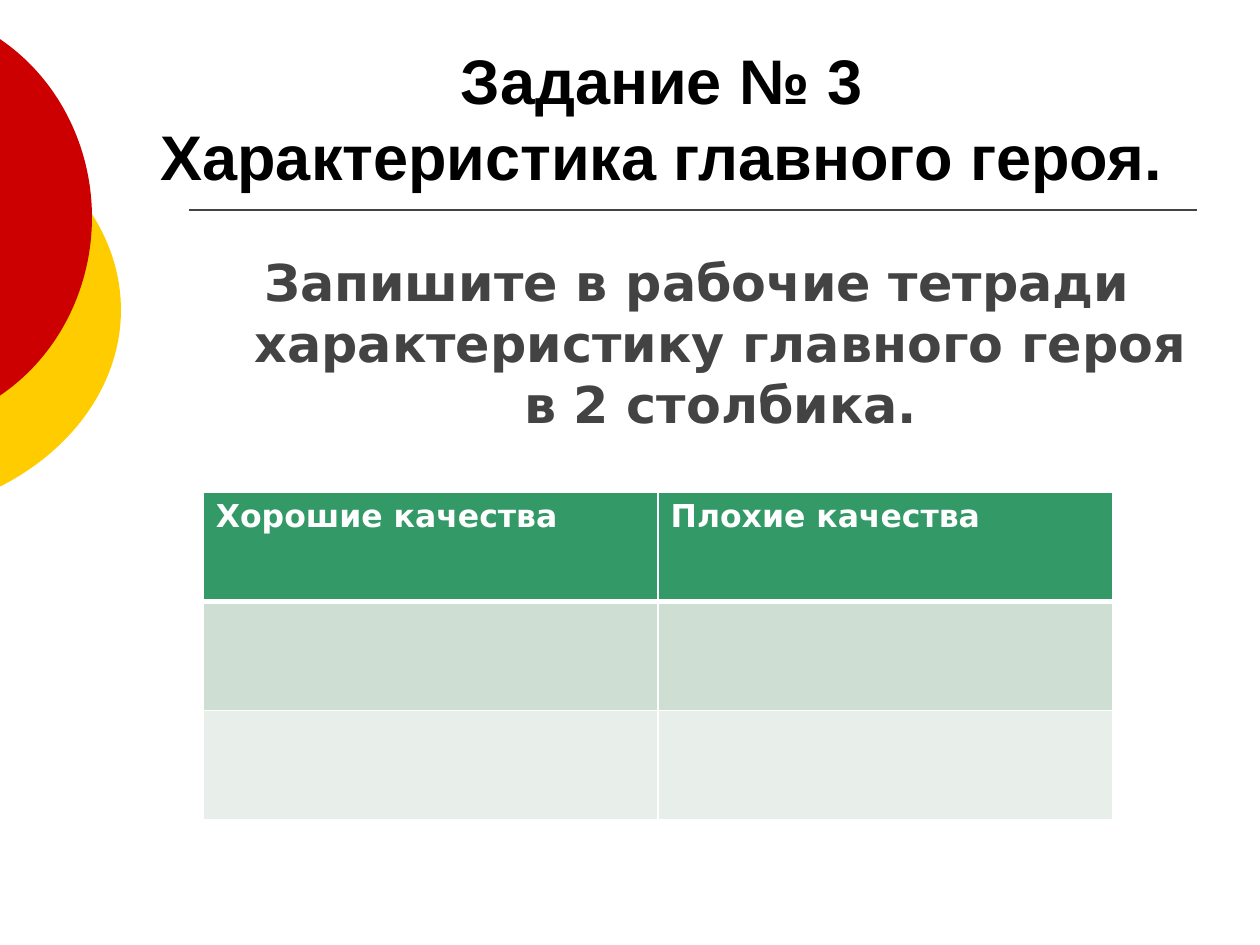
import pptx
import pptx.util
import pptx.dml.color
import pptx.enum.shapes
import pptx.enum.text
import pptx.oxml
import pptx.oxml.ns
import lxml.etree

RGB = pptx.dml.color.RGBColor
WHITE = RGB(0xFF, 0xFF, 0xFF)
BLACK = RGB(0, 0, 0)
GREY = RGB(0x43, 0x43, 0x43)
YELLOW = RGB(0xFF, 0xCC, 0x00)
RED = RGB(0xCC, 0x00, 0x00)
GREEN = RGB(0x33, 0x99, 0x66)
BAND_DARK = RGB(0xCE, 0xDE, 0xD3)
BAND_LIGHT = RGB(0xE8, 0xEF, 0xEA)

COLS, ROWS = 100, 75
UNIT = pptx.util.Inches(0.1)
CUT_SHARE = 0.82
ALIGN = pptx.enum.text.PP_ALIGN
ANCHOR = pptx.enum.text.MSO_ANCHOR


def grid(*values):
    return [round(v * UNIT) for v in values]


def write(tf, text, *, size, color, font="DejaVu Sans", align=ALIGN.LEFT,
          anchor=ANCHOR.TOP, before=0, indent=0):
    tf.word_wrap = True
    tf.vertical_anchor = anchor
    p = tf.paragraphs[0]
    p.alignment = align
    p.space_before = pptx.util.Pt(before)
    if indent:
        pPr = p._p.get_or_add_pPr()
        pPr.set("marL", str(indent))
        pPr.set("indent", str(-indent))
    for i, line in enumerate(text.split("\n")):
        if i:
            p.add_line_break()
        r = p.add_run()
        r.text = line
        r.font.name = font
        r.font.size = pptx.util.Pt(size)
        r.font.bold = True
        r.font.color.rgb = color


def add_text(s, box, text, **fmt):
    write(s.shapes.add_textbox(*grid(*box)).text_frame, text, **fmt)


def add_cut_disc(s, box, color):
    x, y, w, h = grid(*box)
    cut, visible = -x, x + w
    rise = h * CUT_SHARE
    top = (h - rise) / 2

    def points(*shares):
        return "".join(
            f'<a:pt x="{round(cut + px * visible)}" y="{round(top + py * rise)}"/>'
            for px, py in shares)

    fb = s.shapes.build_freeform(0, y)
    fb.add_line_segments([(x + w, y + h // 2), (0, y + h)], close=True)
    sp = fb.convert_to_shape()
    sp.left, sp.top, sp.width, sp.height = x, y, w, h
    outline = pptx.oxml.parse_xml(
        f'<a:path {pptx.oxml.ns.nsdecls("a")} w="{w}" h="{h}">'
        f'<a:moveTo>{points((0, 0))}</a:moveTo>'
        f'<a:cubicBezTo>{points((0.63, 0.11), (1, 0.3), (1, 0.5))}</a:cubicBezTo>'
        f'<a:cubicBezTo>{points((1, 0.7), (0.63, 0.89), (0, 1))}</a:cubicBezTo>'
        '<a:close/></a:path>')
    path_list = sp._element.spPr.find(".//" + pptx.oxml.ns.qn("a:pathLst"))
    path_list[0] = outline
    sp.shadow.inherit = False
    sp.fill.solid()
    sp.fill.fore_color.rgb = color
    sp.line.fill.background()


def add_rule(s, box):
    x, y, w, h = grid(*box)
    line = s.shapes.add_connector(
        pptx.enum.shapes.MSO_CONNECTOR.STRAIGHT, x, y, x + w, y + h)
    line.line.color.rgb = GREY
    line.line.width = pptx.util.Pt(1)
    lxml.etree.SubElement(line._element.spPr, pptx.oxml.ns.qn("a:effectLst"))


def set_borders(cell, top, bottom):
    tcPr = cell._tc.get_or_add_tcPr()
    for i, (side, width) in enumerate(zip("LRTB", (1, 1, top, bottom))):
        tcPr.insert(i, pptx.oxml.parse_xml(
            f'<a:ln{side} {pptx.oxml.ns.nsdecls("a")} w="{pptx.util.Pt(width)}">'
            f'<a:solidFill><a:srgbClr val="{WHITE}"/></a:solidFill></a:ln{side}>'))


def add_qualities_table(s, box, headers):
    fills = (GREEN, BAND_DARK, BAND_LIGHT)
    table = s.shapes.add_table(len(fills), len(headers), *grid(*box)).table
    for i, fill in enumerate(fills):
        for j, header in enumerate(headers):
            cell = table.cell(i, j)
            cell.fill.solid()
            cell.fill.fore_color.rgb = fill
            set_borders(cell, 3 if i == 1 else 1, 3 if i == 0 else 1)
            if i == 0:
                write(cell.text_frame, header, size=18, color=WHITE)


def build_task_slide(prs):
    s = prs.slides.add_slide(prs.slide_layouts[6])
    s.background.fill.solid()
    s.background.fill.fore_color.rgb = WHITE
    add_cut_disc(s, (-35.4, 7.5, 45, 34.2), YELLOW)
    add_cut_disc(s, (-26.5, 0, 33.8, 34.5), RED)
    add_rule(s, (15, 16.67, 80, 0))
    add_text(s, (11.4, 3.3, 83.6, 12.5),
             "Задание № 3 \nХарактеристика главного героя. ",
             size=36, color=BLACK, font="Arial", align=ALIGN.CENTER,
             anchor=ANCHOR.BOTTOM)
    add_text(s, (15.35, 19.4, 80, 45),
             "Запишите в рабочие тетради характеристику главного героя "
             "в 2 столбика.",
             size=29, color=GREY, align=ALIGN.CENTER, before=6,
             indent=grid(3.75)[0])
    add_qualities_table(s, (16.13, 39.06, 72.2, 26),
                        ("Хорошие качества", "Плохие качества"))


def main():
    prs = pptx.Presentation()
    prs.slide_width, prs.slide_height = grid(COLS, ROWS)
    build_task_slide(prs)
    prs.save("out.pptx")


if __name__ == "__main__":
    main()
